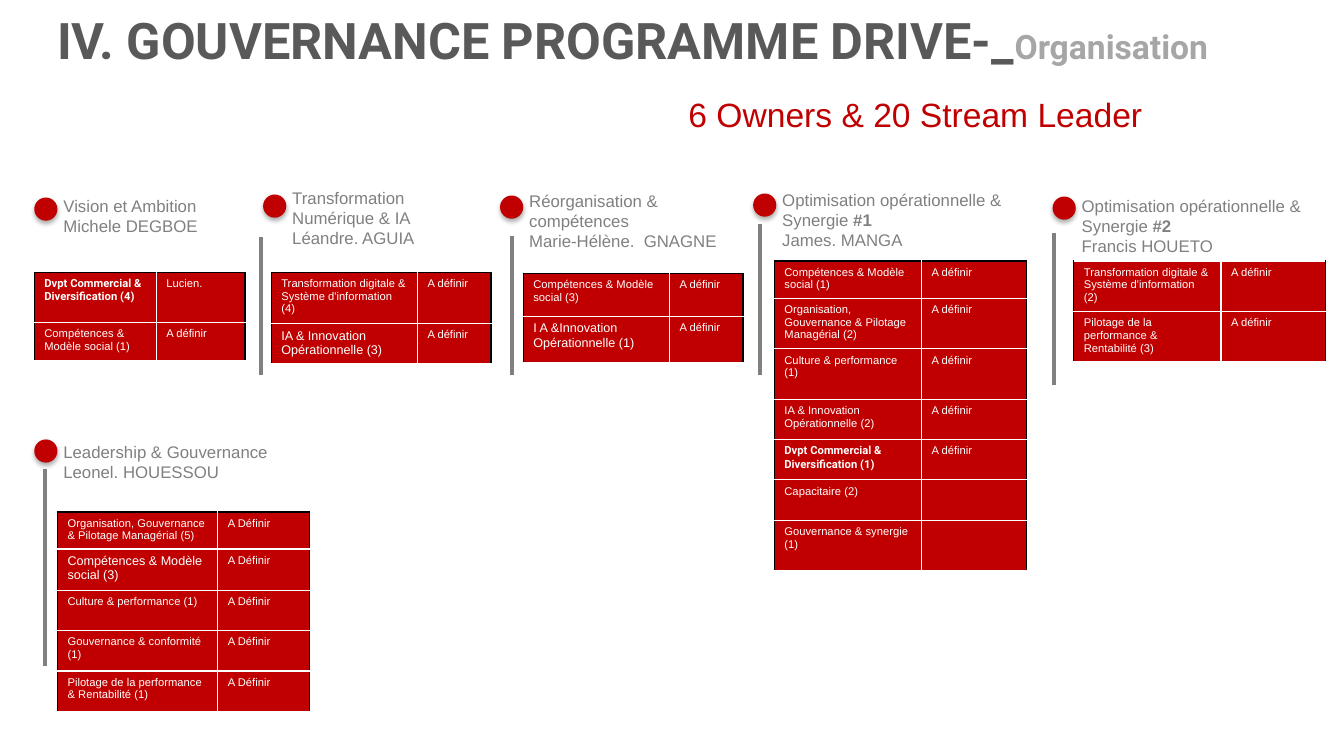
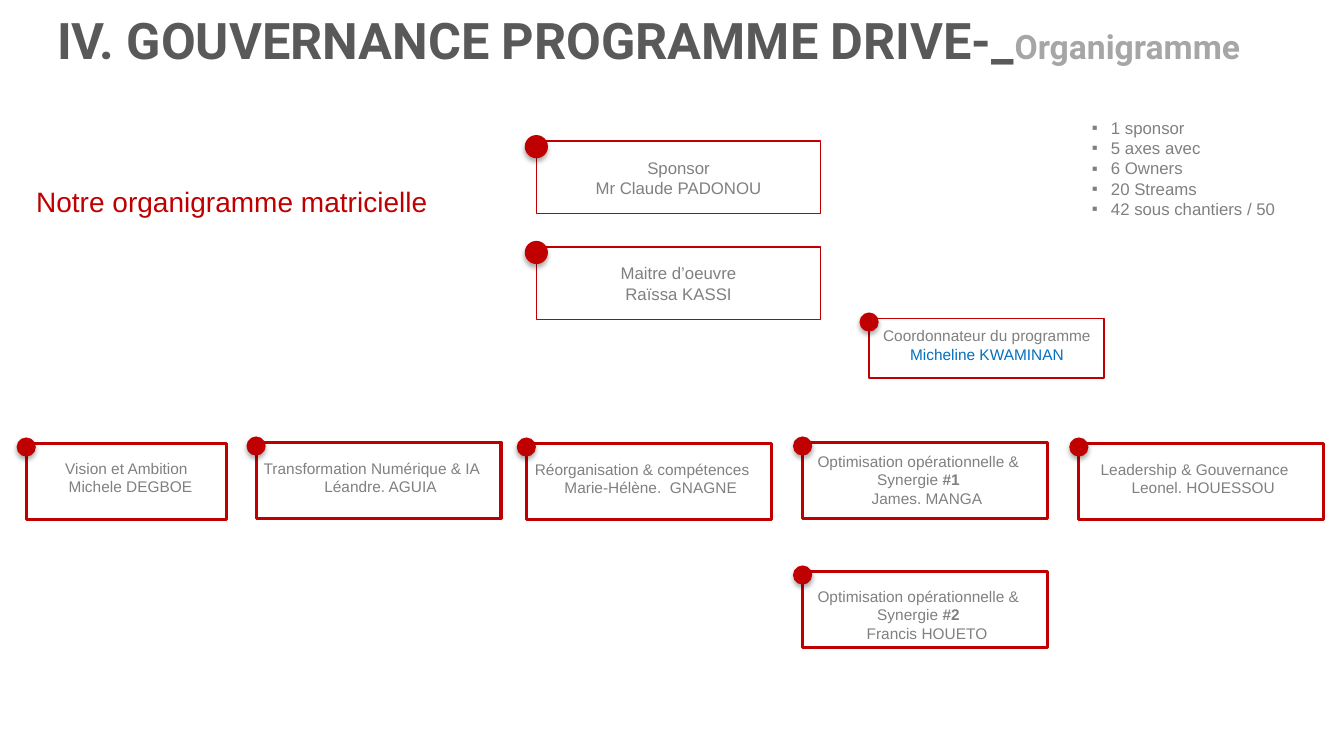
from lxml.etree import SubElement as Sub
from pptx import Presentation
from pptx.dml.color import RGBColor as RGB
from pptx.enum.shapes import MSO_CONNECTOR as LINK, MSO_SHAPE as SHAPE
from pptx.enum.text import MSO_ANCHOR as ANCHOR, PP_ALIGN as ALIGN
from pptx.oxml.ns import qn
from pptx.util import Inches, Pt

RED = RGB(0xC0, 0x00, 0x00)
GREY = RGB(0x80, 0x80, 0x80)
DARK = RGB(0x59, 0x59, 0x59)
PALE = RGB(0xA6, 0xA6, 0xA6)
BLUE = RGB(0x00, 0x70, 0xC0)
WHITE = RGB(0xFF, 0xFF, 0xFF)
BLACK = RGB(0x00, 0x00, 0x00)
SANS, HEAVY = "Arial", "Roboto"
BIG, SMALL = 0.23, 0.19

PLAIN = dict(size=8, name=SANS, bold=False)
LARGE = dict(size=9, name=SANS, bold=False)
BOLD = dict(size=8, name=HEAVY, bold=True)

TBD = "A définir"
TBD_CAP = "A Définir"

VISION = [("Vision et Ambition",), ("Michele DEGBOE",)]
DIGITAL = [("Transformation Numérique & IA",), ("Léandre. AGUIA",)]
REORG = [("Réorganisation & compétences",), ("Marie-Hélène.  GNAGNE",)]
OPTIM = "Optimisation opérationnelle & Synergie "
OPTIM_1 = [(OPTIM, "#1"), ("James. MANGA",)]
OPTIM_2 = [(OPTIM, "#2"), ("Francis HOUETO",)]
LEADER = [("Leadership & Gouvernance",), ("Leonel. HOUESSOU",)]

UNITS = [
    dict(x=0.34, y=1.96, lines=VISION, rise=0.07, wide=2.09, grid=(0, 0.74),
         cols=(1.21, 0.88), rows=[
             (0.5, "Dvpt Commercial & Diversification (4)", "Lucien.", BOLD),
             (0.38, "Compétences & Modèle social (1)", TBD, PLAIN)]),
    dict(x=2.61, y=1.93, lines=DIGITAL, rise=0.12, wide=2.18, grid=(0.08, 0.77),
         bar=(-0.02, 0.42, 1.37), cols=(1.45, 0.73), rows=[
             (0.51, "Transformation digitale & Système d'information (4)", TBD, PLAIN),
             (0.39, "IA & Innovation Opérationnelle (3)", TBD, LARGE)]),
    dict(x=4.96, y=1.94, lines=REORG, rise=0.1, wide=2.41, grid=(0.23, 0.77),
         bar=(0.12, 0.4, 1.38), cols=(1.45, 0.73), rows=[
             (0.43, "Compétences & Modèle social (3)", TBD, PLAIN),
             (0.46, "I A &Innovation Opérationnelle (1)", TBD, LARGE)]),
    dict(x=7.47, y=1.92, lines=OPTIM_1, rise=0.09, wide=2.8, grid=(0.21, 0.67),
         bar=(0.07, 0.3, 1.5), cols=(1.46, 1.04), rows=[
             (0.37, "Compétences & Modèle social (1)", TBD, PLAIN),
             (0.5, "Organisation, Gouvernance & Pilotage Managérial (2)", TBD, PLAIN),
             (0.5, "Culture & performance (1)", TBD, PLAIN),
             (0.4, "IA & Innovation Opérationnelle (2)", TBD, PLAIN),
             (0.4, "Dvpt Commercial & Diversification (1)", TBD, BOLD),
             (0.4, "Capacitaire (2)", "", PLAIN),
             (0.5, "Gouvernance & synergie (1)", "", PLAIN)]),
    dict(x=10.44, y=1.95, lines=OPTIM_2, rise=0.06, wide=2.8, grid=(0.21, 0.64),
         bar=(0.01, 0.36, 1.51), cols=(1.46, 1.04), edge=WHITE, rows=[
             (0.5, "Transformation digitale & Système d'information (2)", TBD, PLAIN),
             (0.5, "Pilotage de la performance & Rentabilité (3)", TBD, PLAIN)]),
    dict(x=0.34, y=4.36, lines=LEADER, rise=0.03, wide=2.8, grid=(0.23, 0.72),
         bar=(0.11, 0.29, 1.96), cols=(1.59, 0.91), rows=[
             (0.36, "Organisation, Gouvernance & Pilotage Managérial (5)", TBD_CAP, PLAIN),
             (0.41, "Compétences & Modèle social (3)", TBD_CAP, LARGE),
             (0.4, "Culture & performance (1)", TBD_CAP, PLAIN),
             (0.4, "Gouvernance & conformité (1)", TBD_CAP, PLAIN),
             (0.4, "Pilotage de la performance & Rentabilité (1)", TBD_CAP, PLAIN)]),
]

CHIEFS = [
    (1.4, [("Sponsor",), ("Mr Claude PADONOU",)]),
    (2.45, [("Maitre d’oeuvre",), ("Raïssa KASSI",)]),
]
OWNERS = [
    (0.26, 4.4, 1.99, VISION, (0.15, 0.15, 0.15), 0.08),
    (2.54, 4.39, 2.43, DIGITAL, (0.03, 0.16, 0.16), 0.17),
    (5.22, 4.4, 2.43, REORG, (0.03, 0.16, 0.16), 0.17),
    (7.96, 4.39, 2.43, OPTIM_1, (0.03, 0.09, 0.16), 0.17),
    (10.7, 4.4, 2.43, LEADER, (0.03, 0.16, 0.16), 0.17),
    (7.96, 5.67, 2.43, OPTIM_2, (0.03, 0.15, 0.16), 0.17),
]
FACTS = ["1 sponsor", "5 axes avec", "6 Owners", "20 Streams", "42 sous chantiers / 50"]


def style(par, size, color=GREY, name=SANS, bold=False):
    font = par.font
    font.size, font.name, font.bold = Pt(size), name, bold
    font.color.rgb = color


def write(frame, lines, size, color=GREY, align=ALIGN.LEFT):
    frame.word_wrap = True
    for i, parts in enumerate(lines):
        par = frame.paragraphs[0] if i == 0 else frame.add_paragraph()
        par.alignment = align
        for k, part in enumerate(parts):
            run = par.add_run()
            run.text = part
            if k:
                run.font.bold = True
        style(par, size, color)
    return frame


def indent(par, left, hang=0):
    props = par._p.get_or_add_pPr()
    props.set("marL", str(Inches(left)))
    props.set("indent", str(-Inches(hang)))
    return props


def box(slide, x, y, w, h):
    frame = slide.shapes.add_textbox(Inches(x), Inches(y), Inches(w), Inches(h)).text_frame
    frame.word_wrap = True
    return frame


def title(slide, topic):
    par = box(slide, 0.47, 0.04, 12.06, 0.71).paragraphs[0]
    for text, size, color in (("IV. GOUVERNANCE PROGRAMME DRIVE-_", 36, DARK), (topic, 24, PALE)):
        run = par.add_run()
        run.text = text
        run.font.size = Pt(size)
        run.font.color.rgb = color
    par.font.name, par.font.bold = HEAVY, True


def motto(slide, x, y, w, text, size):
    frame = write(box(slide, x, y, w, 0.46), [(text,)], size, RED)
    frame.paragraphs[0].line_spacing = 0.9


def dot(slide, x, y, size):
    disc = slide.shapes.add_shape(SHAPE.OVAL, Inches(x), Inches(y), Inches(size), Inches(size))
    disc.fill.solid()
    disc.fill.fore_color.rgb = RED
    disc.line.fill.background()
    disc.shadow.inherit = False
    glow = Sub(disc._element.spPr.find(qn("a:effectLst")), qn("a:outerShdw"),
               blurRad=str(Pt(3.5)), dist=str(Pt(2.2)), dir="5400000", rotWithShape="0")
    tint = Sub(glow, qn("a:srgbClr"), val=str(BLACK))
    Sub(tint, qn("a:alpha"), val="32000")


def stem(slide, x, y, size):
    line = slide.shapes.add_connector(LINK.STRAIGHT, Inches(x), Inches(y), Inches(x), Inches(y + size))
    line.line.color.rgb = GREY
    line.line.width = Pt(3)
    Sub(line._element.spPr, qn("a:effectLst"))


def rule(cell, sides):
    props = cell._tc.get_or_add_tcPr()
    for tag, color in zip(("lnL", "lnR", "lnT", "lnB"), sides):
        line = Sub(props, qn("a:" + tag), w=str(Pt(1)))
        Sub(Sub(line, qn("a:solidFill")), qn("a:srgbClr"), val=str(color))
    cell.fill.solid()
    cell.fill.fore_color.rgb = RED


def grid(slide, x, y, cols, rows, edge):
    high = sum(row[0] for row in rows)
    table = slide.shapes.add_table(len(rows), 2, Inches(x), Inches(y),
                                   Inches(sum(cols)), Inches(high)).table
    table.first_row = table.horz_banding = False
    for col, wide in zip(table.columns, cols):
        col.width = Inches(wide)
    for i, (tall, stream, lead, look) in enumerate(rows):
        table.rows[i].height = Inches(tall)
        top = WHITE if i else edge
        for k, (text, face) in enumerate(((stream, look), (lead, PLAIN))):
            cell = table.cell(i, k)
            cell.text = text
            style(cell.text_frame.paragraphs[0], color=WHITE, **face)
            rule(cell, (WHITE if k else BLACK, BLACK if k else WHITE, top, WHITE))


def unit(slide, x, y, lines, rise, wide, grid_at, cols, rows, bar=None, edge=BLACK):
    frame = write(box(slide, x, y - rise, wide, 0.5), lines, 12)
    for par in frame.paragraphs:
        indent(par, 0.19)
    if bar:
        stem(slide, x + bar[0], y + bar[1], bar[2])
    grid(slide, x + grid_at[0], y + grid_at[1], cols, rows, edge)
    dot(slide, x, y, BIG)


def card(slide, x, y, w, h, lines, size, line, mark, pads=None, shift=0):
    rect = slide.shapes.add_shape(SHAPE.RECTANGLE, Inches(x), Inches(y), Inches(w), Inches(h))
    rect.shadow.inherit = False
    rect.fill.solid()
    rect.fill.fore_color.rgb = WHITE
    rect.line.color.rgb = RED
    rect.line.width = Pt(line)
    frame = write(rect.text_frame, lines, size, align=ALIGN.CENTER)
    frame.vertical_anchor = ANCHOR.MIDDLE
    if pads:
        frame.vertical_anchor = ANCHOR.TOP
        frame.margin_left, frame.margin_top, frame.margin_right = map(Inches, pads)
        frame.margin_bottom = 0
    if shift:
        indent(frame.paragraphs[-1], shift)
    dot(slide, x - mark / 2, y - 0.06, mark)
    return frame


def facts(slide, x, y, w, h):
    frame = box(slide, x, y, w, h)
    for i, text in enumerate(FACTS):
        par = frame.paragraphs[0] if i == 0 else frame.add_paragraph()
        par.text = text
        props = indent(par, 0.19, 0.19)
        Sub(props, qn("a:buFont"), typeface=SANS)
        Sub(props, qn("a:buChar"), char="▪")
        style(par, 12)


def streams(slide):
    title(slide, "Organisation")
    motto(slide, 6.73, 0.93, 5.18, "6 Owners & 20 Stream Leader", 24)
    for data in UNITS:
        rest = dict(data)
        unit(slide, grid_at=rest.pop("grid"), **rest)


def chart(slide):
    title(slide, "Organigramme")
    motto(slide, 0.26, 1.82, 4.08, "Notre organigramme matricielle", 20)
    facts(slide, 10.73, 1.12, 2.51, 1.11)
    for y, lines in CHIEFS:
        card(slide, 5.32, y, 2.82, 0.72, lines, 12, 1, BIG)
    aide = card(slide, 8.62, 3.16, 2.33, 0.59,
                [("Coordonnateur du programme",), ("Micheline KWAMINAN",)],
                11, 1, SMALL, (0.05, 0.08, 0.04))
    aide.paragraphs[1].font.color.rgb = BLUE
    for x, y, w, lines, pads, shift in OWNERS:
        card(slide, x, y, w, 0.75, lines, 11, 2.25, SMALL, pads, shift)


def main():
    deck = Presentation()
    deck.slide_width, deck.slide_height = Inches(13.33), Inches(7.5)
    for build in (streams, chart):
        build(deck.slides.add_slide(deck.slide_layouts[6]))
    deck.save("out.pptx")


if __name__ == "__main__":
    main()
